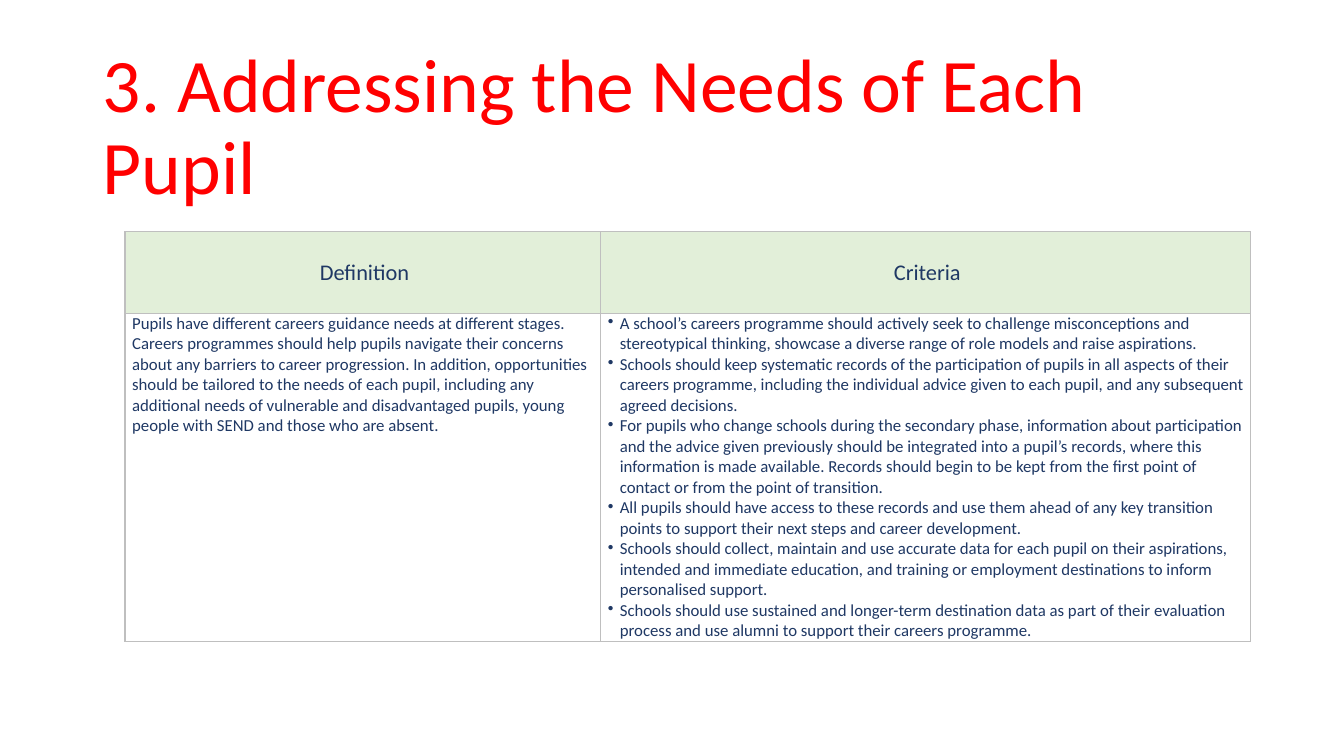
from dataclasses import dataclass

from lxml import etree
from pptx import Presentation
from pptx.dml.color import RGBColor
from pptx.enum.text import MSO_ANCHOR, MSO_AUTO_SIZE, PP_ALIGN
from pptx.oxml.ns import qn
from pptx.util import Cm, Pt

LEFT, CENTER = PP_ALIGN.LEFT, PP_ALIGN.CENTER
TOP, MIDDLE, BOTTOM = MSO_ANCHOR.TOP, MSO_ANCHOR.MIDDLE, MSO_ANCHOR.BOTTOM
NO_AUTOFIT = MSO_AUTO_SIZE.NONE
TITLE_ONLY = 5

HEADING = "3. Addressing the Needs of Each Pupil"
COLUMN_HEADS = ["Definition", "Criteria"]
DEFINITION = [
    "Pupils have different careers guidance needs at different stages. Careers programmes should help "
    "pupils navigate their concerns about any barriers to career progression. In addition, opportunities "
    "should be tailored to the needs of each pupil, including any additional needs of vulnerable and "
    "disadvantaged pupils, young people with SEND and those who are absent.",
]
CRITERIA = [
    "A school’s careers programme should actively seek to challenge misconceptions and stereotypical "
    "thinking, showcase a diverse range of role models and raise aspirations.",
    "Schools should keep systematic records of the participation of pupils in all aspects of their careers "
    "programme, including the individual advice given to each pupil, and any subsequent agreed decisions.",
    "For pupils who change schools during the secondary phase, information about participation and the "
    "advice given previously should be integrated into a pupil’s records, where this information is made "
    "available. Records should begin to be kept from the first point of contact or from the point of "
    "transition.",
    "All pupils should have access to these records and use them ahead of any key transition points to "
    "support their next steps and career development.",
    "Schools should collect, maintain and use accurate data for each pupil on their aspirations, intended "
    "and immediate education, and training or employment destinations to inform personalised support.",
    "Schools should use sustained and longer-term destination data as part of their evaluation process "
    "and use alumni to support their careers programme.",
]


@dataclass(frozen=True)
class Theme:
    font: str = "Calibri"
    title_color: str = "FF0000"
    text_color: str = "1F3864"
    head_fill: str = "E2EFD9"
    border: str = "BFBFBF"
    title_size: int = 54
    head_size: int = 16
    body_size: int = 12


THEME = Theme()
COLUMN_WIDTHS = [Cm(11.99), Cm(16.38)]
ROW_HEIGHTS = [Cm(2.06), Cm(8.26)]
BULLET_INDENT = Cm(0.3)


def add_bullet(paragraph):
    properties = paragraph._p.get_or_add_pPr()
    properties.set("marL", str(BULLET_INDENT))
    properties.set("indent", str(-BULLET_INDENT))
    etree.SubElement(properties, qn("a:buChar"), char="•")


def write_text(frame, lines, *, size, color, align=LEFT, bullets=False, spacing=1.0):
    frame.word_wrap = True
    for index, line in enumerate(lines):
        paragraph = frame.paragraphs[0] if index == 0 else frame.add_paragraph()
        paragraph.alignment = align
        paragraph.line_spacing = spacing
        if bullets:
            add_bullet(paragraph)
        run = paragraph.add_run()
        run.text = line
        run.font.name = THEME.font
        run.font.size = Pt(size)
        run.font.bold = False
        run.font.color.rgb = RGBColor.from_string(color)


def style_cell(cell, fill=None, anchor=TOP):
    cell.margin_left = Cm(0.18)
    cell.margin_right = Cm(0.1)
    cell.margin_top = cell.margin_bottom = 0
    cell.vertical_anchor = anchor
    properties = cell._tc.get_or_add_tcPr()
    for side in ("lnL", "lnR", "lnT", "lnB"):
        line = etree.SubElement(properties, qn(f"a:{side}"), w=str(Pt(1)))
        solid = etree.SubElement(line, qn("a:solidFill"))
        etree.SubElement(solid, qn("a:srgbClr"), val=THEME.border)
    if fill:
        cell.fill.solid()
        cell.fill.fore_color.rgb = RGBColor.from_string(fill)
    else:
        cell.fill.background()


def add_heading(slide):
    title = slide.shapes.title
    title.left, title.top, title.width, title.height = Cm(2.34), Cm(1.37), Cm(29.57), Cm(4.06)
    frame = title.text_frame
    frame.auto_size = NO_AUTOFIT
    frame.vertical_anchor = BOTTOM
    write_text(frame, [HEADING], size=THEME.title_size, color=THEME.title_color, spacing=0.9)


def add_criteria_table(slide):
    table = slide.shapes.add_table(
        len(ROW_HEIGHTS), len(COLUMN_WIDTHS), Cm(3.15), Cm(5.84), sum(COLUMN_WIDTHS), sum(ROW_HEIGHTS)
    ).table
    table.first_row = table.horz_banding = False
    for row, height in zip(table.rows, ROW_HEIGHTS):
        row.height = height
    for column, width in zip(table.columns, COLUMN_WIDTHS):
        column.width = width
    for index, (head, body) in enumerate(zip(COLUMN_HEADS, [DEFINITION, CRITERIA])):
        head_cell, body_cell = table.cell(0, index), table.cell(1, index)
        style_cell(head_cell, fill=THEME.head_fill, anchor=MIDDLE)
        write_text(head_cell.text_frame, [head], size=THEME.head_size, color=THEME.text_color, align=CENTER)
        style_cell(body_cell)
        write_text(body_cell.text_frame, body, size=THEME.body_size, color=THEME.text_color,
                   bullets=len(body) > 1)


def main():
    deck = Presentation()
    deck.slide_width, deck.slide_height = Cm(33.87), Cm(19.05)
    slide = deck.slides.add_slide(deck.slide_layouts[TITLE_ONLY])
    add_heading(slide)
    add_criteria_table(slide)
    deck.save("out.pptx")


if __name__ == "__main__":
    main()
